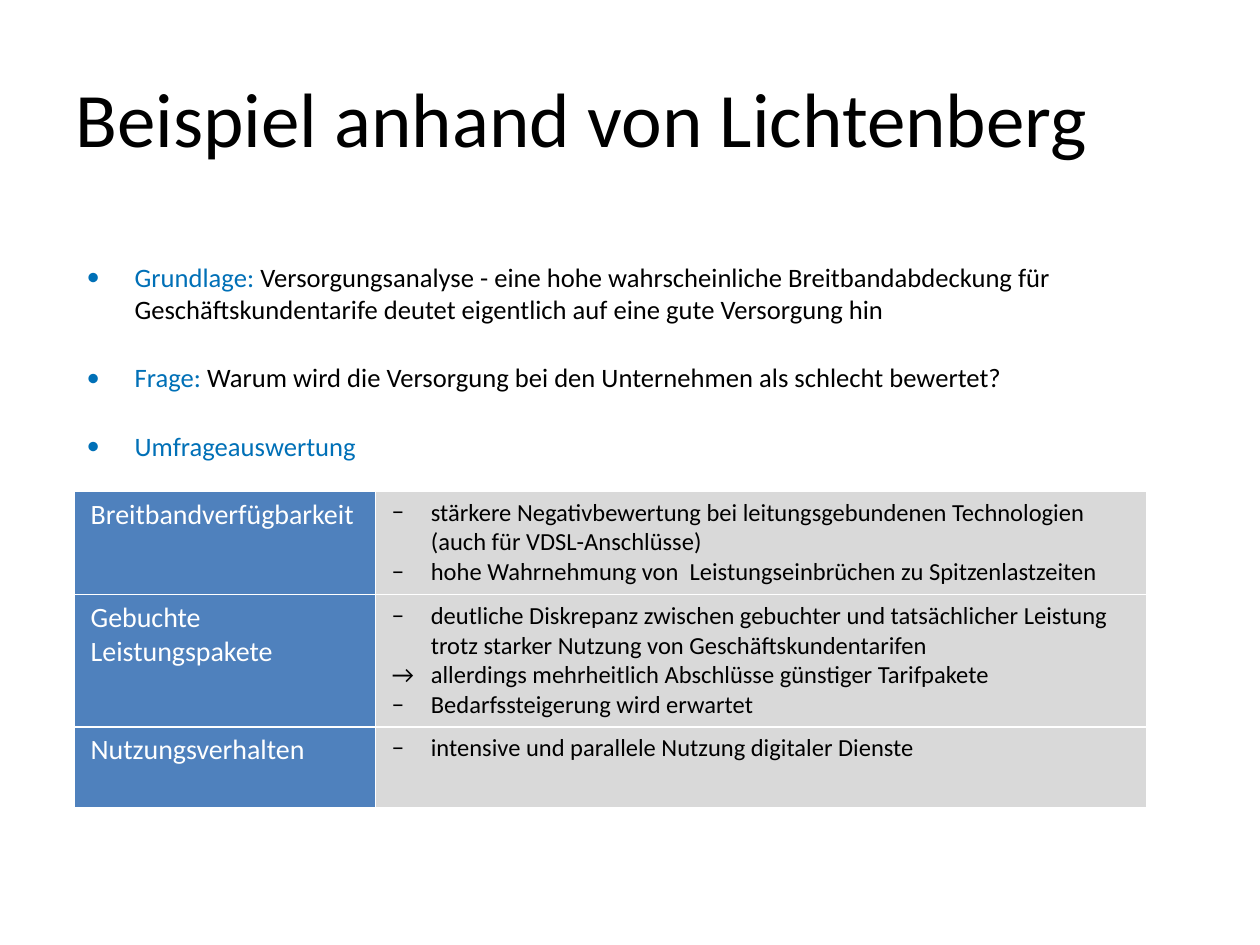
"""Build the Lichtenberg slide: a title, three bullets and a table of findings."""
from dataclasses import dataclass

from lxml import etree
from pptx import Presentation
from pptx import util as u
from pptx.dml.color import RGBColor
from pptx.enum import text
from pptx.oxml.ns import qn


@dataclass(frozen=True)
class Theme:
    font: str = "Calibri"
    black: str = "000000"
    white: str = "FFFFFF"
    blue: str = "0070B7"
    head: str = "4F81BD"
    grey: str = "D9D9D9"
    title: float = 44
    body: float = 15.2
    label: float = 16
    note: float = 14
    gap: float = 21


@dataclass(frozen=True)
class Box:
    col: float
    row: float
    wide: float
    high: float


@dataclass(frozen=True)
class Point:
    label: str
    rest: str = ""


@dataclass(frozen=True)
class Note:
    words: str
    mark: str = "−"


@dataclass(frozen=True)
class Topic:
    label: str
    high: float
    notes: tuple[Note, ...]


THEME = Theme()
COLS, ROWS = 100, 75
WIDE, HIGH = u.Inches(10), u.Inches(7.5)
TITLE = Box(5, 3, 90, 12.5)
BODY = Box(5.9, 20.2, 84.6, 18.1)
TABLE = Box(5.9, 39, 85.1, 25.1)
LABEL_COLS = 23.9

POINTS = (
    Point("Grundlage: ", "Versorgungsanalyse - eine hohe wahrscheinliche Breitbandabdeckung "
          "für Geschäftskundentarife deutet eigentlich auf eine gute Versorgung hin"),
    Point("Frage: ", "Warum wird die Versorgung bei den Unternehmen als schlecht bewertet?"),
    Point("Umfrageauswertung"),
)
TOPICS = (
    Topic("Breitbandverfügbarkeit", 8.2, (
        Note("stärkere Negativbewertung bei leitungsgebundenen Technologien "
             "(auch für VDSL-Anschlüsse)"),
        Note("hohe Wahrnehmung von  Leistungseinbrüchen zu Spitzenlastzeiten"),
    )),
    Topic("Gebuchte Leistungspakete", 10.5, (
        Note("deutliche Diskrepanz zwischen gebuchter und tatsächlicher Leistung "
             "trotz starker Nutzung von Geschäftskundentarifen"),
        Note("allerdings mehrheitlich Abschlüsse günstiger Tarifpakete", "→"),
        Note("Bedarfssteigerung wird erwartet"),
    )),
    Topic("Nutzungsverhalten", 6.4, (
        Note("intensive und parallele Nutzung digitaler Dienste"),
    )),
)


def across(cols: float) -> int:
    """Turn grid columns into a length."""
    return round(WIDE * cols / COLS)


def down(rows: float) -> int:
    """Turn grid rows into a length."""
    return round(HIGH * rows / ROWS)


def place(box: Box) -> tuple[int, int, int, int]:
    """Turn a grid box into left, top, width and height."""
    return across(box.col), down(box.row), across(box.wide), down(box.high)


def style(run, size: float, color: str) -> None:
    """Set the font, size and colour of a run."""
    run.font.name = THEME.font
    run.font.size = u.Pt(size)
    run.font.color.rgb = RGBColor.from_string(color)


def mark(para, sign: str, cols: float) -> None:
    """Give a paragraph a bullet with a hanging indent."""
    props = para._p.get_or_add_pPr()
    props.set("marL", str(across(cols)))
    props.set("indent", str(-across(cols)))
    etree.SubElement(props, qn("a:buFont")).set("typeface", THEME.font)
    etree.SubElement(props, qn("a:buChar")).set("char", sign)


def next_para(frame, index: int):
    """Return the first paragraph of a frame or a new one."""
    return frame.add_paragraph() if index else frame.paragraphs[0]


def add_frame(slide, box: Box):
    """Add a wrapping text box and return its frame."""
    frame = slide.shapes.add_textbox(*place(box)).text_frame
    frame.word_wrap = True
    return frame


def draw_title(slide, words: str) -> None:
    """Draw the slide title."""
    frame = add_frame(slide, TITLE)
    frame.vertical_anchor = text.MSO_ANCHOR.MIDDLE
    frame.text = words
    style(frame.paragraphs[0].runs[0], THEME.title, THEME.black)


def draw_points(slide, points: tuple[Point, ...]) -> None:
    """Draw the bullets with coloured lead words."""
    frame = add_frame(slide, BODY)
    for index, point in enumerate(points):
        para = next_para(frame, index)
        para.space_before = u.Pt(THEME.gap if index else 0)
        mark(para, "•", 3.8)
        for words, color in ((point.label, THEME.blue), (point.rest, THEME.black)):
            if words:
                run = para.add_run()
                run.text = words
                style(run, THEME.body, color)


def fill_cell(cell, color: str) -> None:
    """Set the fill and margins of a cell."""
    cell.fill.solid()
    cell.fill.fore_color.rgb = RGBColor.from_string(color)
    cell.margin_left = cell.margin_right = across(1.3)
    cell.margin_top = cell.margin_bottom = down(0.5)


def draw_table(slide, topics: tuple[Topic, ...]) -> None:
    """Draw the table of topics and their notes."""
    table = slide.shapes.add_table(len(topics), 2, *place(TABLE)).table
    table.first_row = table.horz_banding = False
    table.columns[0].width = across(LABEL_COLS)
    table.columns[1].width = across(TABLE.wide - LABEL_COLS)
    for row, topic in zip(table.rows, topics):
        row.height = down(topic.high)
        left, right = row.cells
        fill_cell(left, THEME.head)
        fill_cell(right, THEME.grey)
        left.text_frame.text = topic.label
        style(left.text_frame.paragraphs[0].runs[0], THEME.label, THEME.white)
        for index, note in enumerate(topic.notes):
            para = next_para(right.text_frame, index)
            para.text = note.words
            mark(para, note.mark, 3.1)
            style(para.runs[0], THEME.note, THEME.black)


def main() -> None:
    """Build and save the slide."""
    deck = Presentation()
    deck.slide_width, deck.slide_height = WIDE, HIGH
    slide = deck.slides.add_slide(deck.slide_layouts[6])
    draw_title(slide, "Beispiel anhand von Lichtenberg")
    draw_points(slide, POINTS)
    draw_table(slide, TOPICS)
    deck.save("out.pptx")


if __name__ == "__main__":
    main()
